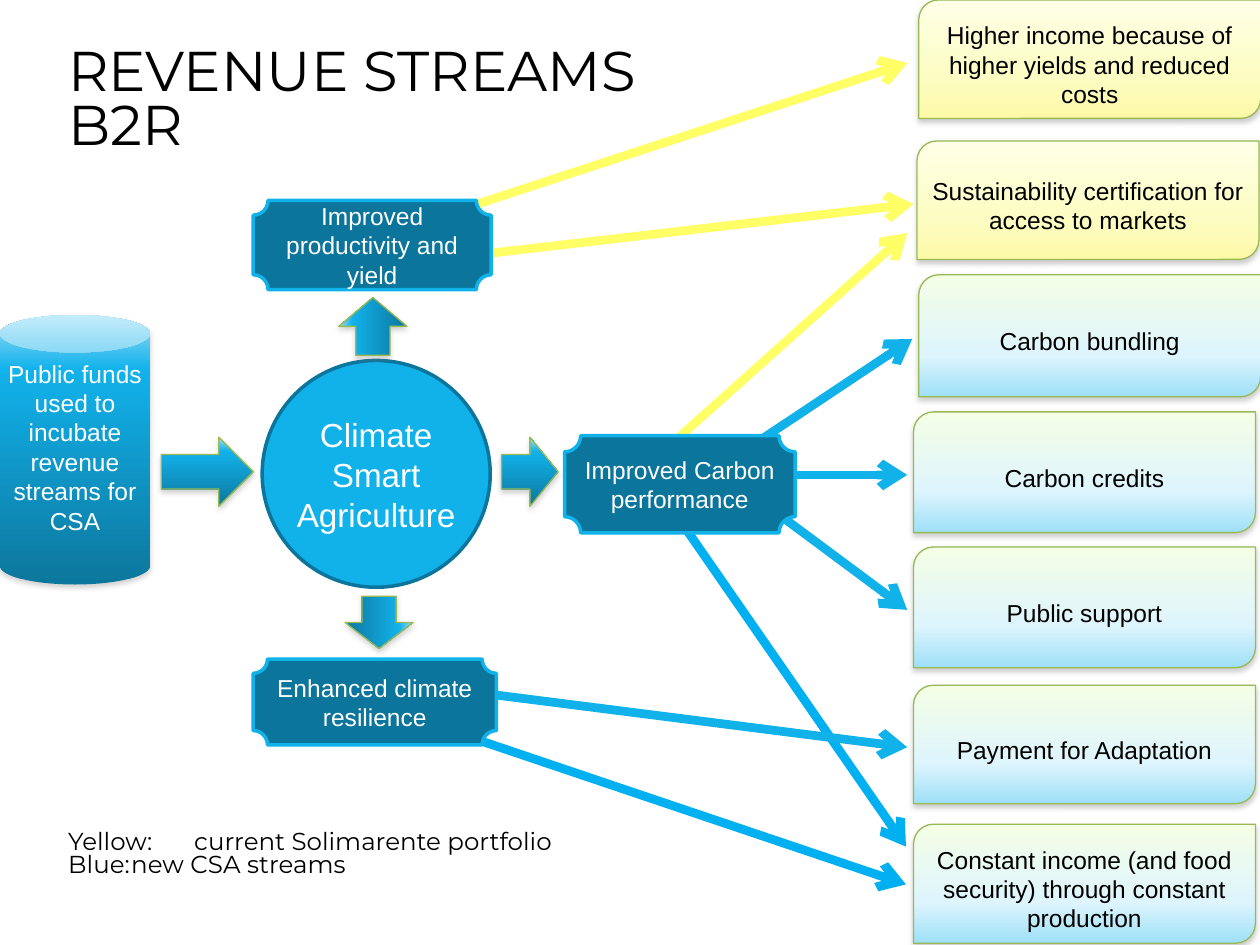
import pptx
import pptx.util
import pptx.dml.color
import pptx.enum.shapes
import pptx.enum.text
import pptx.oxml.ns
from lxml import etree

Pt = pptx.util.Pt
RGBColor = pptx.dml.color.RGBColor
SHAPE = pptx.enum.shapes.MSO_SHAPE
ALIGN = pptx.enum.text.PP_ALIGN
ANCHOR = pptx.enum.text.MSO_ANCHOR
qn = pptx.oxml.ns.qn

BLACK = RGBColor(0x00, 0x00, 0x00)
WHITE = RGBColor(0xFF, 0xFF, 0xFF)
GREY = RGBColor(0x80, 0x80, 0x80)
YELLOW = RGBColor(0xFF, 0xFF, 0x66)
BLUE = RGBColor(0x11, 0xB1, 0xEA)
BRIGHT_BLUE = RGBColor(0x00, 0xB0, 0xF0)
DARK_BLUE = RGBColor(0x0B, 0x75, 0x9B)
GREEN = RGBColor(0x98, 0xB9, 0x54)

# Gradients run from bottom to top: (position in percent, colour)
CURRENT = [(0, RGBColor(0xFD, 0xF9, 0xA7)), (35, RGBColor(0xFD, 0xFD, 0xC3)),
           (100, RGBColor(0xFE, 0xFF, 0xE7))]
NEW = [(0, RGBColor(0x9E, 0xE0, 0xF8)), (35, RGBColor(0xDF, 0xF5, 0xFD)),
       (100, RGBColor(0xF5, 0xFF, 0xE6))]
DEEP = [(0, RGBColor(0x0C, 0x77, 0x9D)), (80, RGBColor(0x12, 0xB2, 0xEB)),
        (100, RGBColor(0x9E, 0xE0, 0xF8))]

# Left, top, height, label, gradient
STREAMS = [
    (3, 0, 67.7, "Higher income because of higher yields and reduced costs", CURRENT),
    (2, 80.6, 67.7, "Sustainability certification for access to markets", CURRENT),
    (3, 157, 69.8, "Carbon bundling", NEW),
    (0, 235.4, 69, "Carbon credits", NEW),
    (0, 312.6, 69, "Public support", NEW),
    (0, 391.6, 67.7, "Payment for Adaptation", NEW),
    (0, 471, 68, "Constant income (and food security) through constant production", NEW),
]
# Left, top, width, height, label
RESULTS = [
    (144.7, 0.5, 136, 51, "Improved productivity and yield"),
    (144.7, 262.6, 139, 49, "Enhanced climate resilience"),
    (322.6, 135, 131.8, 55.5, "Improved Carbon performance"),
]
# Left, top, width, height, rotation
BLOCK_ARROWS = [
    (196.6, 53, 33, 39, 270),
    (201.6, 222.2, 30, 39, 90),
    (92.2, 135.8, 52.6, 39.6, 0),
    (286.6, 135.8, 32.4, 39.6, 0),
]
# Start, end, colour
LINKS = [
    (381.6, 255.6, 518.4, 133.2, YELLOW),
    (274.3, 145.4, 522, 116.6, YELLOW),
    (235.4, 128.9, 518.4, 36, YELLOW),
    (381.6, 287.3, 517.7, 483.8, BRIGHT_BLUE),
    (274.3, 396, 518.4, 427, BLUE),
    (223.2, 406, 517.7, 505.4, BRIGHT_BLUE),
    (426.2, 257, 521.3, 193.7, BLUE),
    (454.3, 271.4, 518.4, 271.4, BLUE),
    (426.2, 280, 518.4, 348.5, BLUE),
]


def set_gradient(sp, stops):
    sp.fill.gradient()
    sp.fill.gradient_angle = 90
    gs_list = sp._element.spPr.find(qn("a:gradFill")).find(qn("a:gsLst"))
    gs_list.clear()
    for position, color in stops:
        gs = etree.SubElement(gs_list, qn("a:gs"), pos=str(position * 1000))
        etree.SubElement(gs, qn("a:srgbClr"), val=str(color))


def set_shadow(sp, opacity, distance):
    effects = sp._element.spPr.find(qn("a:effectLst"))
    shadow = etree.SubElement(effects, qn("a:outerShdw"), blurRad=str(Pt(3)),
                              dist=str(Pt(distance)), dir="5400000", rotWithShape="0")
    color = etree.SubElement(shadow, qn("a:srgbClr"), val=str(GREY))
    etree.SubElement(color, qn("a:alpha"), val=str(opacity * 1000))


def set_text(sp, text, size, color, top=0, bottom=0):
    tf = sp.text_frame
    tf.word_wrap = True
    tf.vertical_anchor = ANCHOR.MIDDLE
    tf.margin_left = tf.margin_right = 0
    tf.margin_top, tf.margin_bottom = Pt(top), Pt(bottom)
    p = tf.paragraphs[0]
    p.text = text
    p.alignment = ALIGN.CENTER
    p.font.name, p.font.size, p.font.color.rgb = "Arial", Pt(size), color


def add_shape(slide, kind, box, fill, line=None, width=2):
    """Add a preset shape; fill is a colour or a list of gradient stops."""
    sp = slide.shapes.add_shape(kind, *(Pt(v) for v in box))
    sp.shadow.inherit = False
    if isinstance(fill, list):
        set_gradient(sp, fill)
    else:
        sp.fill.solid()
        sp.fill.fore_color.rgb = fill
    if line is None:
        sp.line.fill.background()
    else:
        sp.line.color.rgb = line
        sp.line.width = Pt(width)
    return sp


def add_heading_text(slide, box, lines, size, anchor, tabs=()):
    tf = slide.shapes.add_textbox(*(Pt(v) for v in box)).text_frame
    tf.word_wrap = True
    tf.vertical_anchor = anchor
    tf.margin_left = tf.margin_right = tf.margin_top = tf.margin_bottom = 0
    for i, line in enumerate(lines):
        p = tf.paragraphs[0] if i == 0 else tf.add_paragraph()
        p.text = line
        p.line_spacing = 0.8
        if tabs:
            tab_list = etree.SubElement(p._p.get_or_add_pPr(), qn("a:tabLst"))
            for tab in tabs:
                etree.SubElement(tab_list, qn("a:tab"), pos=str(Pt(tab)), algn="l")
        p.font.name, p.font.size, p.font.color.rgb = "Montserrat", Pt(size), BLACK


def add_links(slide, x, y):
    for x1, y1, x2, y2, color in LINKS:
        link = slide.shapes.add_connector(
            pptx.enum.shapes.MSO_CONNECTOR.STRAIGHT,
            Pt(x + x1), Pt(y + y1), Pt(x + x2), Pt(y + y2))
        link.line.color.rgb = color
        link.line.width = Pt(5)
        etree.SubElement(link.line._get_or_add_ln(), qn("a:tailEnd"), type="arrow")
        etree.SubElement(link._element.spPr, qn("a:effectLst"))


def add_model(slide, x, y):
    """Public funds, the agriculture hub, its block arrows and three results."""
    can = add_shape(slide, SHAPE.CAN, (x, y + 66, 85.7, 154), DEEP)
    set_shadow(can, 35, 1.8)
    set_text(can, "Public funds used to incubate revenue streams for CSA", 14, WHITE, bottom=14)

    hub = add_shape(slide, SHAPE.OVAL, (x + 149.8, y + 92, 130.3, 129.6), BLUE, DARK_BLUE)
    set_text(hub, "Climate Smart Agriculture", 19, WHITE)

    for left, top, width, height, rotation in BLOCK_ARROWS:
        arrow = add_shape(slide, SHAPE.RIGHT_ARROW, (x + left, y + top, width, height),
                          DEEP, GREEN, 0.75)
        arrow.rotation = rotation
        set_shadow(arrow, 35, 1.8)

    for left, top, width, height, label in RESULTS:
        plaque = add_shape(slide, SHAPE.PLAQUE, (x + left, y + top, width, height),
                           DARK_BLUE, BLUE)
        set_text(plaque, label, 14, WHITE)


def add_streams(slide, x, y, width):
    for left, top, height, label, stops in STREAMS:
        sp = add_shape(slide, SHAPE.ROUND_2_DIAG_RECTANGLE,
                       (x + left, y + top, width, height), stops, GREEN, 0.75)
        set_shadow(sp, 38, 1.6)
        set_text(sp, label, 14, BLACK, top=5.76)


def main():
    prs = pptx.Presentation()
    prs.slide_width, prs.slide_height = Pt(720), Pt(540)
    slide = prs.slides.add_slide(prs.slide_layouts[6])
    add_heading_text(slide, (39, 0, 609, 116.6), ["REVENUE STREAMS\vB2R"], 32, ANCHOR.MIDDLE)
    add_links(slide, 0, 0)
    add_model(slide, 0, 114)
    add_streams(slide, 522, 0, 195.4)
    add_heading_text(slide, (39, 475.2, 609, 60),
                     ["Yellow:\tcurrent Solimarente portfolio", "Blue:\tnew CSA streams"],
                     14, ANCHOR.TOP, tabs=(36, 72))
    prs.save("out.pptx")


if __name__ == "__main__":
    main()
